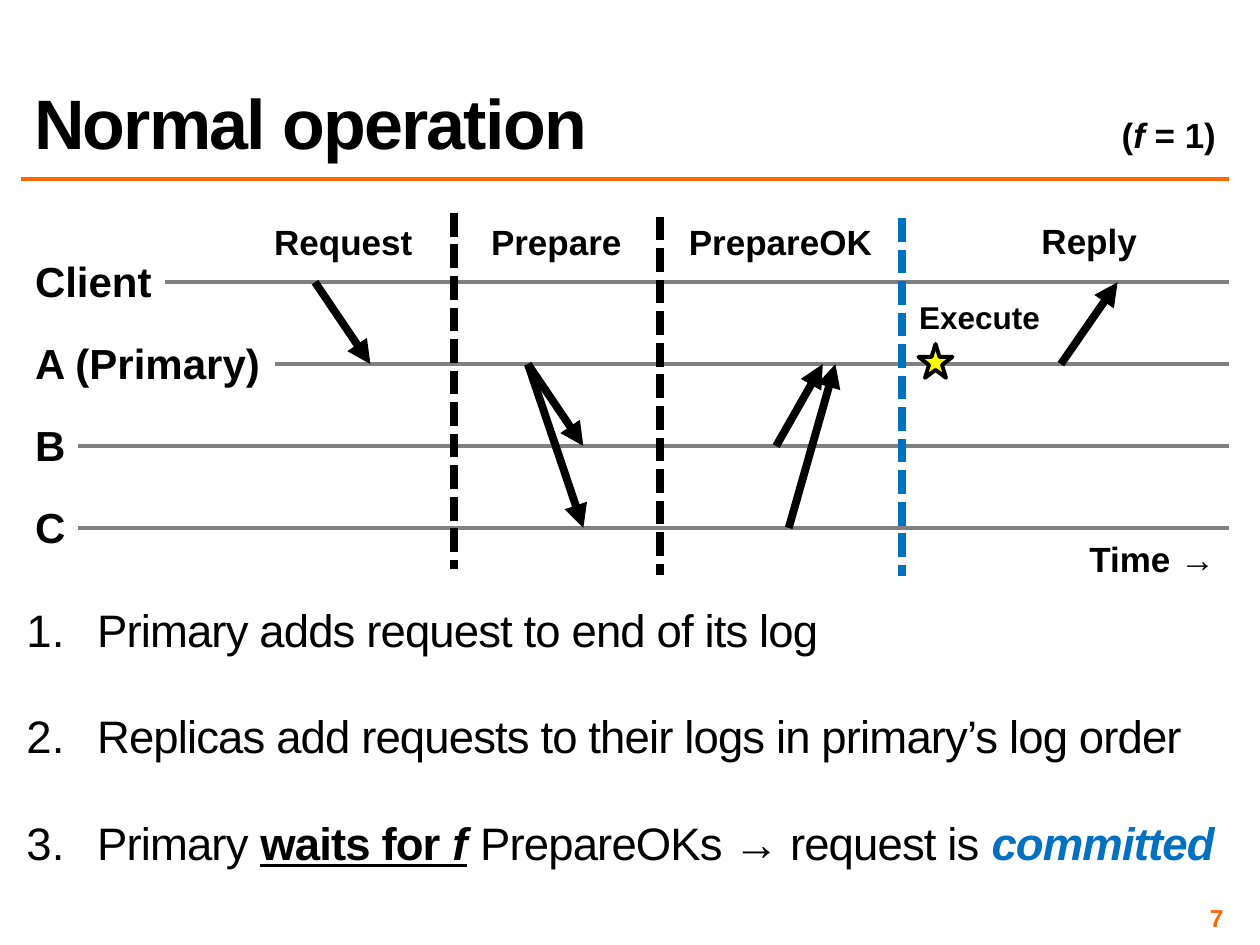
from lxml.etree import SubElement
from pptx import Presentation
from pptx.dml.color import RGBColor
from pptx.enum.dml import MSO_LINE
from pptx.enum.shapes import MSO_CONNECTOR, MSO_SHAPE
from pptx.enum.text import MSO_ANCHOR, MSO_AUTO_SIZE, PP_ALIGN
from pptx.oxml.ns import qn
from pptx.util import Inches, Pt

BLACK = RGBColor(0x00, 0x00, 0x00)
GRAY = RGBColor(0x80, 0x80, 0x80)
ORANGE = RGBColor(0xFF, 0x66, 0x00)
BLUE = RGBColor(0x00, 0x70, 0xC0)
YELLOW = RGBColor(0xFF, 0xFF, 0x00)

FONT = "Arial"
LEFT, RIGHT = 0.17, 9.75
LANE_TOP, LANE_GAP = 2.24, 0.65

# Lane name, where its line starts
LANES = [("Client", 1.31), ("A (Primary)", 2.18), ("B", 0.62), ("C", 0.62)]
# Phase name, left, top, width
PHASES = [
    ("Request", 2.07, 1.7, 1.31),
    ("Prepare", 3.79, 1.7, 1.25),
    ("PrepareOK", 5.36, 1.7, 1.67),
    ("Reply", 8.16, 1.69, 0.97),
]
# Start x, start lane, end x, end lane
MESSAGES = [
    (2.5, 0, 2.94, 1),
    (4.19, 1, 4.63, 2),
    (4.19, 1, 4.63, 3),
    (6.26, 3, 6.63, 1),
    (6.16, 2, 6.53, 1),
    (8.42, 1, 8.87, 0),
]
# x, top, bottom, color
DIVIDERS = [
    (3.6, 1.69, 4.52, BLACK),
    (5.24, 1.72, 4.56, BLACK),
    (7.16, 1.73, 4.57, BLUE),
]
# Each step is a list of (text, style) runs
STEPS = [
    [("Primary adds request to end of its log", {})],
    [("Replicas add requests to their logs in primary’s log order", {})],
    [
        ("Primary ", {}),
        ("waits for ", {"bold": True, "underline": True}),
        ("f", {"bold": True, "italic": True, "underline": True}),
        (" ", {"bold": True}),
        ("PrepareOKs → request is ", {}),
        ("committed", {"bold": True, "italic": True, "color": BLUE}),
    ],
]


def lane_y(lane):
    return LANE_TOP + lane * LANE_GAP


def style_font(font, size, color=BLACK, bold=True):
    font.name = FONT
    font.size = Pt(size)
    font.bold = bold
    font.color.rgb = color


def add_runs(paragraph, runs, spacing=None):
    for text, style in runs:
        run = paragraph.add_run()
        run.text = text
        run.font.bold = style.get("bold")
        run.font.italic = style.get("italic")
        run.font.underline = style.get("underline")
        if "color" in style:
            run.font.color.rgb = style["color"]
        if spacing is not None:
            run.font._element.set("spc", str(spacing))


def add_text_box(slide, left, top, width, height, inset=None):
    frame = slide.shapes.add_textbox(
        Inches(left), Inches(top), Inches(width), Inches(height)).text_frame
    if inset is not None:
        frame.margin_left = frame.margin_right = Inches(inset)
        frame.margin_top = frame.margin_bottom = Inches(inset)
    return frame


def add_label(slide, runs, left, top, width, height=0.44, size=20,
              align=PP_ALIGN.CENTER):
    frame = add_text_box(slide, left, top, width, height)
    frame.word_wrap = False
    paragraph = frame.paragraphs[0]
    paragraph.alignment = align
    style_font(paragraph.font, size)
    add_runs(paragraph, runs)


def add_line(slide, x1, y1, x2, y2, color, width, dashed=False, arrow=False):
    line = slide.shapes.add_connector(
        MSO_CONNECTOR.STRAIGHT, Inches(x1), Inches(y1), Inches(x2), Inches(y2))
    line.line.color.rgb = color
    line.line.width = Pt(width)
    if dashed:
        line.line.dash_style = MSO_LINE.SQUARE_DOT
    if arrow:
        SubElement(line.line._get_or_add_ln(), qn("a:tailEnd"), type="triangle")
    SubElement(line._element.spPr, qn("a:effectLst"))


def add_title(slide, text):
    title = slide.shapes.title
    title.left, title.top = Inches(LEFT), Inches(0.17)
    title.width, title.height = Inches(RIGHT - LEFT), Inches(1.17)
    frame = title.text_frame
    frame.auto_size = MSO_AUTO_SIZE.NONE
    frame.vertical_anchor = MSO_ANCHOR.BOTTOM
    paragraph = frame.paragraphs[0]
    paragraph.alignment = PP_ALIGN.LEFT
    paragraph.line_spacing = 0.8
    style_font(paragraph.font, 40)
    add_runs(paragraph, [(text, {"bold": True})], spacing=-100)


def add_star(slide, left, top, size):
    star = slide.shapes.add_shape(
        MSO_SHAPE.STAR_5_POINT, Inches(left), Inches(top), Inches(size), Inches(size))
    star.shadow.inherit = False
    star.fill.solid()
    star.fill.fore_color.rgb = YELLOW
    star.line.color.rgb = BLACK
    star.line.width = Pt(2.25)


def add_steps(slide):
    frame = add_text_box(slide, LEFT, 4.82, RIGHT - LEFT, 2.26, inset=0.04)
    frame.word_wrap = True
    for index, runs in enumerate(STEPS):
        paragraph = frame.add_paragraph() if index else frame.paragraphs[0]
        paragraph.line_spacing = 0.8
        paragraph.space_before = Pt(36 if index else 5)
        style_font(paragraph.font, 26, bold=False)
        properties = paragraph._element.get_or_add_pPr()
        properties.set("marL", str(Inches(0.56)))
        properties.set("indent", str(Inches(-0.56)))
        numbering = properties.makeelement(qn("a:buAutoNum"), {"type": "arabicPeriod"})
        properties.find(qn("a:defRPr")).addprevious(numbering)
        add_runs(paragraph, runs, spacing=-50)


def add_slide_number(slide, number):
    frame = add_text_box(slide, 7.42, 7.17, 2.33, 0.23, inset=0.04)
    frame.word_wrap = True
    frame.vertical_anchor = MSO_ANCHOR.MIDDLE
    paragraph = frame.paragraphs[0]
    paragraph.text = number
    paragraph.alignment = PP_ALIGN.RIGHT
    style_font(paragraph.font, 14, ORANGE)


def add_timeline(slide):
    # Lanes with their names
    for lane, (name, start) in enumerate(LANES):
        y = lane_y(lane)
        add_label(slide, [(name, {})], 0.18, y - 0.26, start - LEFT, 0.5, 24,
                  PP_ALIGN.LEFT)
        add_line(slide, start, y, RIGHT, y, GRAY, 2.25)
    add_label(slide, [("Time →", {})], 8.54, 4.22, 1.21)

    # Phases and the messages sent in them
    for name, left, top, width in PHASES:
        add_label(slide, [(name, {})], left, top, width)
    for x1, lane1, x2, lane2 in MESSAGES:
        add_line(slide, x1, lane_y(lane1), x2, lane_y(lane2), BLACK, 4.5, arrow=True)
    for x, top, bottom, color in DIVIDERS:
        add_line(slide, x, top, x, bottom, color, 4.5, dashed=True)

    # Execution at the primary
    add_label(slide, [("Execute", {})], 7.19, 2.32, 1.17, 0.4, 18)
    add_star(slide, 7.29, 2.73, 0.27)


def main():
    presentation = Presentation()
    presentation.slide_width = Inches(10)
    presentation.slide_height = Inches(7.5)
    slide = presentation.slides.add_slide(presentation.slide_layouts[5])

    # Heading
    add_title(slide, "Normal operation")
    add_line(slide, LEFT, 1.42, RIGHT, 1.42, ORANGE, 2)
    add_label(slide, [("(", {}), ("f", {"italic": True}), (" = 1)", {})],
              8.72, 0.85, 1.03, align=PP_ALIGN.RIGHT)

    add_timeline(slide)
    add_steps(slide)
    add_slide_number(slide, "7")
    presentation.save("out.pptx")


if __name__ == "__main__":
    main()
